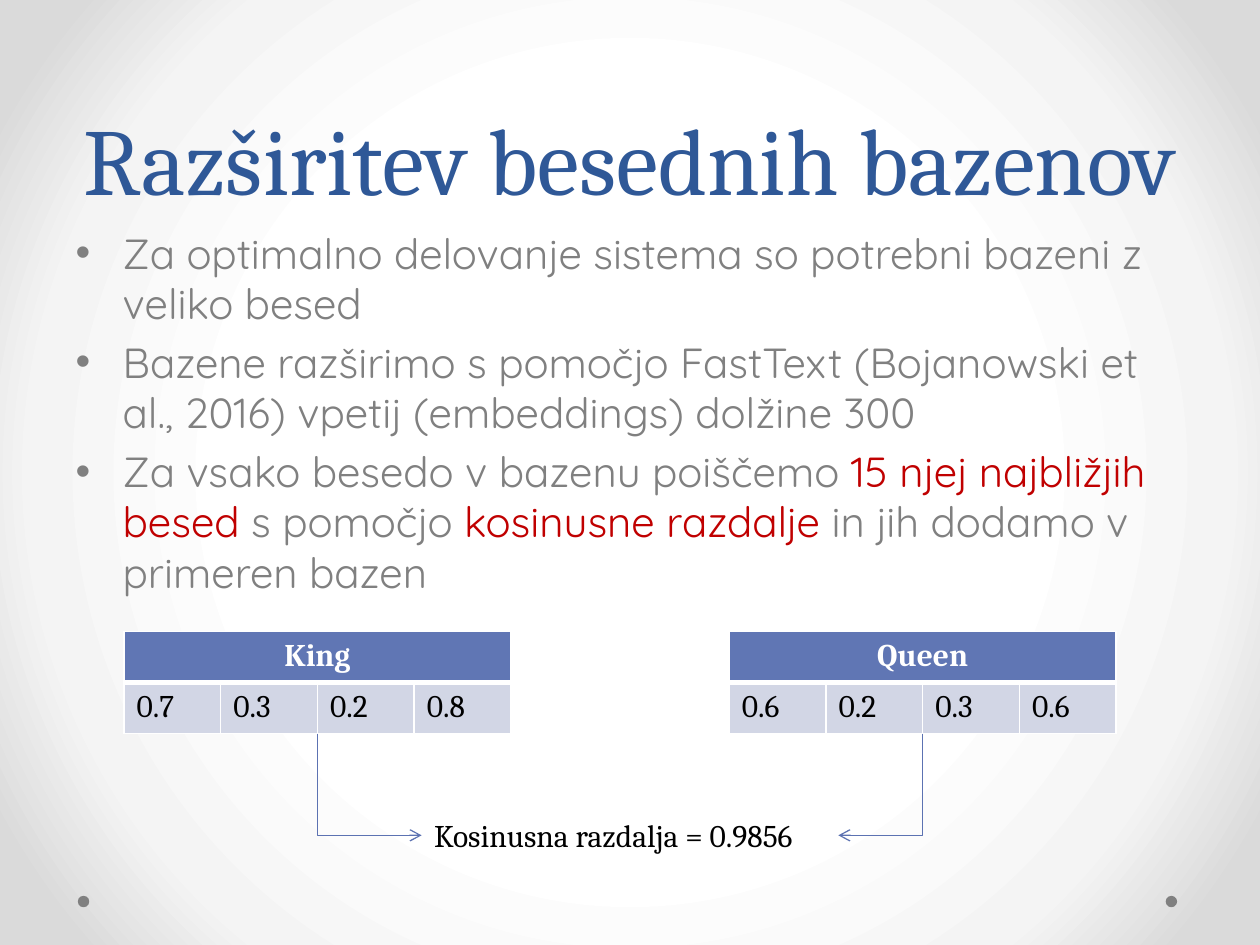
"""Build the slide on extending word pools with embeddings."""
from dataclasses import dataclass

from lxml.etree import SubElement
from pptx import Presentation
from pptx.dml.color import RGBColor
from pptx.enum.shapes import MSO_CONNECTOR, MSO_SHAPE
from pptx.enum.text import MSO_ANCHOR, MSO_AUTO_SIZE, PP_ALIGN
from pptx.oxml import parse_xml
from pptx.oxml.ns import nsdecls, qn
from pptx.util import Cm, Pt

SERIF, SANS = "Cambria", "Quicksand"
BLUE, GREY, RED, BLACK, WHITE = "2F5897", "808080", "C00000", "000000", "FFFFFF"
HEADER, CELL, ARROW = "6076B4", "D2D6E5", "5C72B2"
TABLE_TOP, COL_W, ROW_H = 12.73, 1.95, 1.03
ARROW_Y = 16.84


@dataclass
class WordVector:
    word: str
    values: list[str]
    left: float
    arrow_x: float

    @property
    def middle(self) -> float:
        return self.left + COL_W * len(self.values) / 2


VECTORS = [
    WordVector("King", ["0.7", "0.3", "0.2", "0.8"], 2.5, 8.5),
    WordVector("Queen", ["0.6", "0.2", "0.3", "0.6"], 14.7, 16.9),
]
BULLETS = [
    [("Za optimalno delovanje sistema so potrebni bazeni z veliko besed", GREY)],
    [("Bazene razširimo s pomočjo FastText (Bojanowski et al., 2016) "
      "vpetij (embeddings) dolžine 300", GREY)],
    [("Za vsako besedo v bazenu poiščemo ", GREY),
     ("15 njej najbližjih besed", RED),
     (" s pomočjo ", GREY),
     ("kosinusne razdalje", RED),
     (" in jih dodamo v primeren bazen", GREY)],
]


def rgb(value: str) -> RGBColor:
    return RGBColor.from_string(value)


def add_run(p, text: str, size: float, font: str, color: str, bold: bool = False) -> None:
    r = p.add_run()
    r.text = text
    r.font.size, r.font.name, r.font.bold = Pt(size), font, bold
    r.font.color.rgb = rgb(color)


def place(sp, left: float, top: float, width: float, height: float) -> None:
    sp.left, sp.top, sp.width, sp.height = Cm(left), Cm(top), Cm(width), Cm(height)


def set_background(s) -> None:
    stops = "".join(
        f'<a:gs pos="{pos}000"><a:srgbClr val="{color}"/></a:gs>'
        for pos, color in [(50, WHITE), (76, "F4F4F4"), (92, "DADADA")])
    s.element.cSld.insert(0, parse_xml(
        f'<p:bg {nsdecls("p", "a")}><p:bgPr><a:gradFill rotWithShape="1"><a:gsLst>{stops}</a:gsLst>'
        '<a:path path="circle"><a:fillToRect l="50000" t="50000" r="50000" b="50000"/></a:path>'
        '</a:gradFill><a:effectLst/></p:bgPr></p:bg>'))


def add_dot(s, left: float) -> None:
    sp = s.shapes.add_shape(MSO_SHAPE.OVAL, Cm(left), Cm(18.06), Cm(0.23), Cm(0.23))
    sp.shadow.inherit = False
    sp.fill.solid()
    sp.fill.fore_color.rgb = rgb(GREY)
    sp.line.fill.background()


def add_title(s, text: str) -> None:
    sp = s.shapes.title
    place(sp, 1.27, 0, 22.86, 4.45)
    tf = sp.text_frame
    tf.vertical_anchor = MSO_ANCHOR.BOTTOM
    p = tf.paragraphs[0]
    p.alignment, p.line_spacing = PP_ALIGN.CENTER, Pt(58)
    add_run(p, text, 54, SERIF, BLUE)


def add_bullets(s) -> None:
    sp = s.placeholders[1]
    place(sp, 1.27, 4.45, 22.86, 12.57)
    tf = sp.text_frame
    for i, runs in enumerate(BULLETS):
        p = tf.add_paragraph() if i else tf.paragraphs[0]
        pPr = p._p.get_or_add_pPr()
        pPr.set("marL", str(Cm(0.95)))
        pPr.set("indent", str(-Cm(0.95)))
        SubElement(pPr, qn("a:buFont"), typeface="Arial")
        SubElement(pPr, qn("a:buChar"), char="•")
        for text, color in runs:
            add_run(p, text, 24, SANS, color)


def style_cell(cell, color: str, top: float, bottom: float) -> None:
    tcPr = cell._tc.get_or_add_tcPr()
    for side, width in zip("LRTB", (1, 1, top, bottom)):
        ln = SubElement(tcPr, qn(f"a:ln{side}"), w=str(Pt(width)))
        SubElement(SubElement(ln, qn("a:solidFill")), qn("a:srgbClr"), val=WHITE)
    cell.fill.solid()
    cell.fill.fore_color.rgb = rgb(color)


def add_vector(s, vector: WordVector) -> None:
    n = len(vector.values)
    table = s.shapes.add_table(2, n, Cm(vector.left), Cm(TABLE_TOP),
                               Cm(COL_W * n), Cm(2 * ROW_H)).table
    for col, value in enumerate(vector.values):
        table.columns[col].width = Cm(COL_W)
        style_cell(table.cell(0, col), HEADER, 1, 3)
        style_cell(table.cell(1, col), CELL, 3, 1)
        add_run(table.cell(1, col).text_frame.paragraphs[0], value, 18, SERIF, BLACK)
    table.cell(0, 0).merge(table.cell(0, n - 1))
    p = table.cell(0, 0).text_frame.paragraphs[0]
    p.alignment = PP_ALIGN.CENTER
    add_run(p, vector.word, 18, SERIF, WHITE, True)


def add_bent_arrow(s, x0: float, y0: float, x1: float, y1: float) -> None:
    mid_x, mid_y = (x0 + x1) / 2, (y0 + y1) / 2
    side = 1 if x1 > x0 else -1
    half_w, half_h = side * (y1 - y0) / 2, abs(x1 - x0) / 2
    c = s.shapes.add_connector(MSO_CONNECTOR.ELBOW, Cm(mid_x + half_w), Cm(mid_y - half_h),
                               Cm(mid_x - half_w), Cm(mid_y + half_h))
    c.line.color.rgb, c.line.width = rgb(ARROW), Pt(0.75)
    spPr = c._element.spPr
    spPr.find(qn("a:xfrm")).set("rot", str((270 if side > 0 else 90) * 60000))
    spPr.find(qn("a:prstGeom")).set("prst", "bentConnector2")
    SubElement(spPr.find(qn("a:ln")), qn("a:tailEnd"), type="arrow")
    SubElement(spPr, qn("a:effectLst"))


def add_label(s, text: str) -> None:
    tf = s.shapes.add_textbox(Cm(8.5), Cm(16.33), Cm(8.41), Cm(1.02)).text_frame
    tf.word_wrap, tf.auto_size = True, MSO_AUTO_SIZE.SHAPE_TO_FIT_TEXT
    add_run(tf.paragraphs[0], text, 18, SERIF, BLACK)


def main() -> None:
    prs = Presentation()
    prs.slide_width, prs.slide_height = Cm(25.4), Cm(19.05)
    s = prs.slides.add_slide(prs.slide_layouts[1])
    set_background(s)
    for left in (23.5, 1.57):
        add_dot(s, left)
    add_title(s, "Razširitev besednih bazenov")
    add_bullets(s)
    for vector in VECTORS:
        add_vector(s, vector)
    add_label(s, "Kosinusna razdalja = 0.9856")
    for vector in VECTORS:
        add_bent_arrow(s, vector.middle, TABLE_TOP + 2 * ROW_H, vector.arrow_x, ARROW_Y)
    prs.save("out.pptx")


if __name__ == "__main__":
    main()
